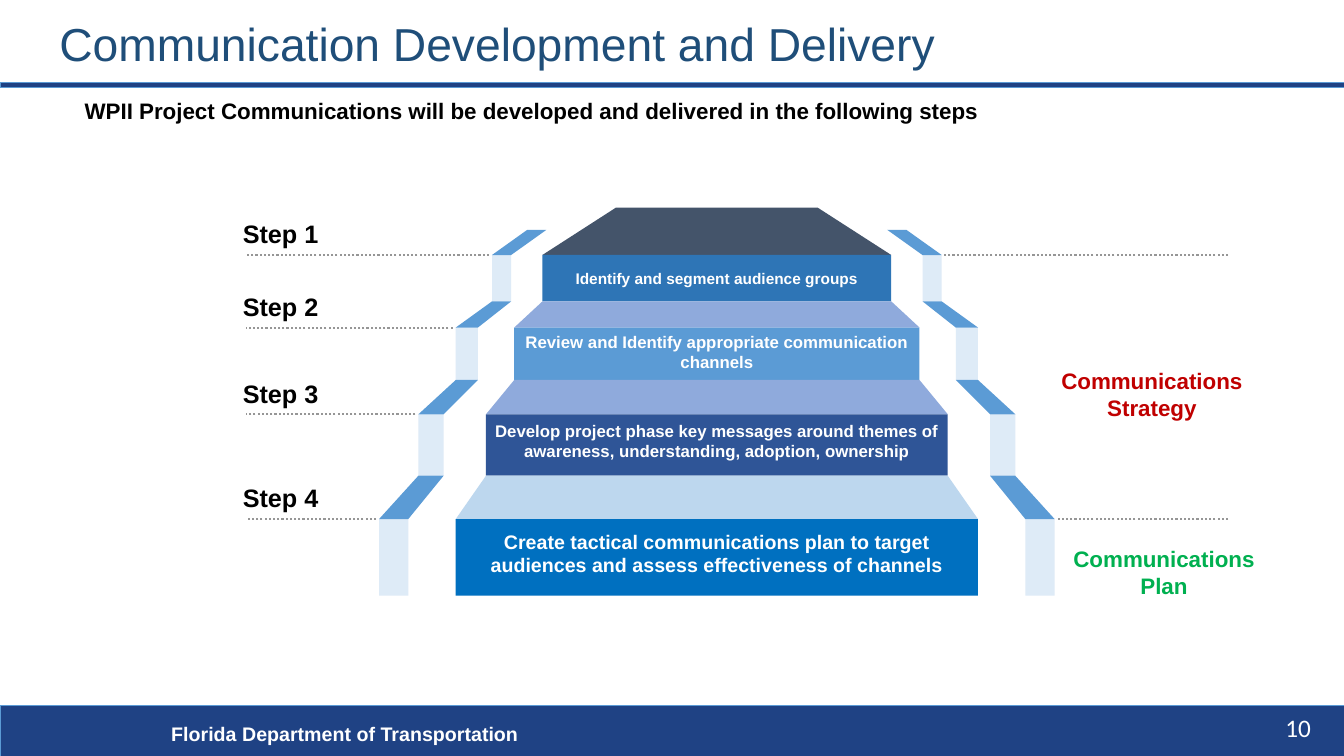
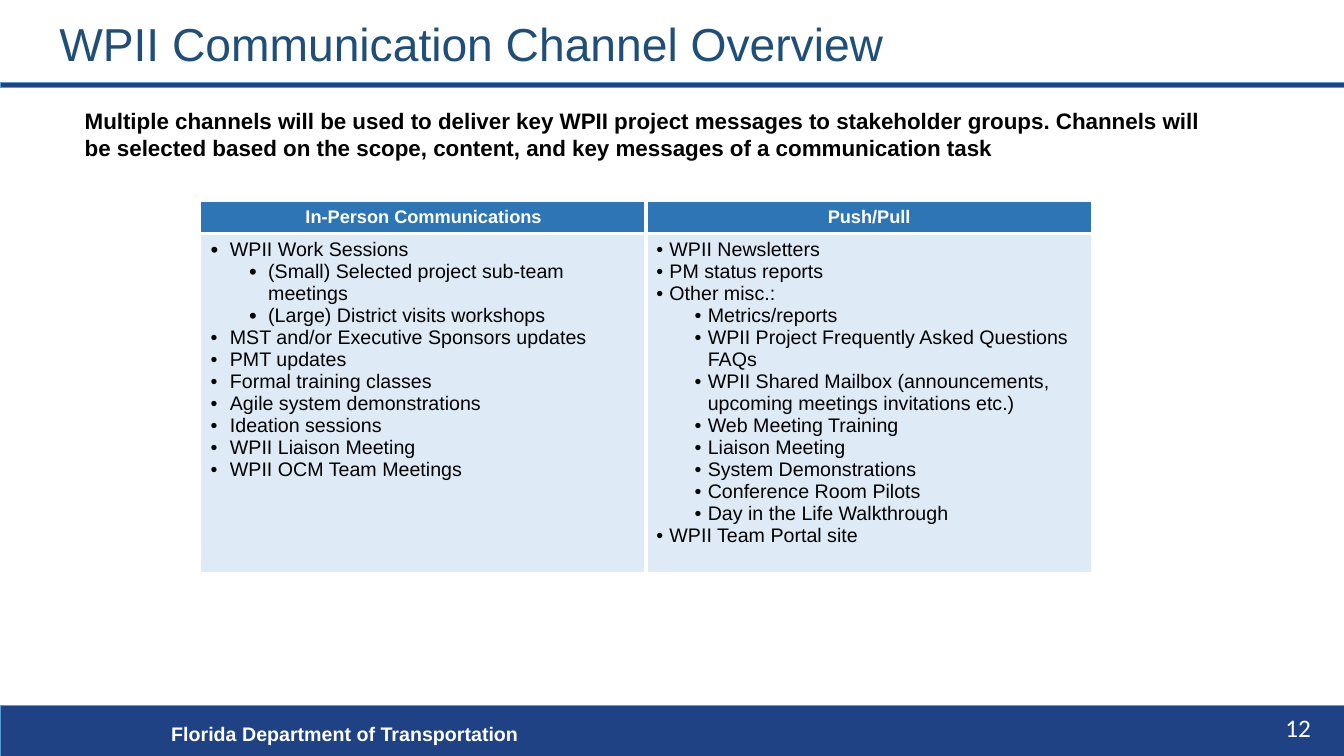
from lxml import etree
from pptx import Presentation
from pptx.dml.color import RGBColor
from pptx.enum.dml import MSO_LINE
from pptx.enum.shapes import MSO_CONNECTOR, MSO_SHAPE
from pptx.enum.text import MSO_ANCHOR, PP_ALIGN
from pptx.oxml.ns import qn
from pptx.util import Inches, Pt

RECTANGLE = MSO_SHAPE.RECTANGLE
STRAIGHT = MSO_CONNECTOR.STRAIGHT
DOTTED = MSO_LINE.ROUND_DOT
LEFT, CENTER = PP_ALIGN.LEFT, PP_ALIGN.CENTER
TOP, MIDDLE = MSO_ANCHOR.TOP, MSO_ANCHOR.MIDDLE
DEFAULT_INSETS = (0.1, 0.05, 0.1, 0.05)
FONT = "Arial"

COLORS = {
    "white": "FFFFFF", "black": "000000", "navy": "1F4284",
    "title": "1F4E79", "sky": "5B9BD5", "pale": "DEEBF7",
    "slate": "44546A", "periwinkle": "8FAADC", "ice": "BDD7EE",
    "steel": "2E75B6", "royal": "2F5597", "azure": "0070C0",
    "gray": "969696", "red": "C00000", "green": "00B050",
}

# Pyramid tiers, top to bottom; lengths are measured from the box top and
# from the vertical axis
TIERS = [
    dict(text="Identify and segment audience groups", size=11, inset=0,
         face="steel", roof="slate", top=0.47, bottom=0.93,
         half=1.73, rail=(2.04, 2.23)),
    dict(text="Review and Identify appropriate communication channels",
         size=12, inset=0.04, face="sky", roof="periwinkle",
         top=1.19, bottom=1.71, half=2.01, rail=(2.37, 2.59)),
    dict(text="Develop project phase key messages around themes of "
              "awareness, understanding, adoption, ownership",
         size=12, inset=0.08, face="royal", roof="periwinkle",
         top=2.05, bottom=2.66, half=2.29, rail=(2.71, 2.96)),
    dict(text="Create tactical communications plan to target audiences "
              "and assess effectiveness of channels",
         size=14, inset=0.08, face="azure", roof="ice",
         top=3.09, bottom=3.85, half=2.59, rail=(3.06, 3.35)),
]

# Bullets as (level, text)
IN_PERSON = [
    (0, "WPII Work Sessions"),
    (1, "(Small) Selected project sub-team meetings"),
    (1, "(Large) District visits workshops"),
    (0, "MST and/or Executive Sponsors updates"),
    (0, "PMT updates"),
    (0, "Formal training classes"),
    (0, "Agile system demonstrations"),
    (0, "Ideation sessions"),
    (0, "WPII Liaison Meeting"),
    (0, "WPII OCM Team Meetings"),
]
PUSH_PULL = [
    (0, "WPII Newsletters"),
    (0, "PM status reports"),
    (0, "Other misc.:"),
    (1, "Metrics/reports"),
    (1, "WPII Project Frequently Asked Questions FAQs"),
    (1, "WPII Shared Mailbox (announcements, upcoming meetings "
        "invitations etc.)"),
    (1, "Web Meeting Training"),
    (1, "Liaison Meeting"),
    (1, "System Demonstrations"),
    (1, "Conference Room Pilots"),
    (1, "Day in the Life Walkthrough"),
    (0, "WPII Team Portal site"),
]
CHANNELS = [
    dict(header="In-Person Communications", items=IN_PERSON,
         hang=0.19, large_bullets=3),
    dict(header="Push/Pull", items=PUSH_PULL, hang=0.13, large_bullets=0),
]


def rgb(name):
    return RGBColor.from_string(COLORS[name])


def write(para, text, size=14, color="black", bold=False, font=FONT,
          align=LEFT):
    para.alignment = align
    span = para.add_run()
    span.text = text
    span.font.size = Pt(size)
    span.font.name = font
    span.font.bold = bold
    span.font.color.rgb = rgb(color)


def fill_frame(frame, text, insets=DEFAULT_INSETS, anchor=TOP, wrap=True,
               spacing=None, **style):
    frame.word_wrap = wrap
    frame.vertical_anchor = anchor
    (frame.margin_left, frame.margin_top,
     frame.margin_right, frame.margin_bottom) = map(Inches, insets)
    for index, line in enumerate(text.split("\n")):
        para = frame.add_paragraph() if index else frame.paragraphs[0]
        if spacing:
            para.line_spacing = spacing
        write(para, line, **style)


def add_text(page, box, text, **style):
    shape = page.shapes.add_textbox(*map(Inches, box))
    fill_frame(shape.text_frame, text, **style)


def paint(shape, fill, line=None):
    shape.shadow.inherit = False
    shape.fill.solid()
    shape.fill.fore_color.rgb = rgb(fill)
    if line:
        shape.line.color.rgb = rgb(line)
        shape.line.width = Pt(0.5)
    else:
        shape.line.fill.background()


def add_block(page, box, fill, line=None):
    shape = page.shapes.add_shape(RECTANGLE, *map(Inches, box))
    paint(shape, fill, line)
    return shape


def add_polygon(page, points, fill):
    corners = [(Inches(x), Inches(y)) for x, y in points]
    builder = page.shapes.build_freeform(*corners[0], scale=1.0)
    builder.add_line_segments(corners[1:], close=True)
    paint(builder.convert_to_shape(), fill)


def add_dotted_line(page, start, end, y):
    line = page.shapes.add_connector(
        STRAIGHT, Inches(start), Inches(y), Inches(end), Inches(y))
    line.line.color.rgb = rgb("gray")
    line.line.width = Pt(1.5)
    line.line.dash_style = DOTTED
    etree.SubElement(line._element.spPr, qn("a:effectLst"))


def add_page(deck, title, number, intro, intro_top):
    """Add a page with the shared bands, title, footer and intro line."""
    page = deck.slides.add_slide(deck.slide_layouts[6])
    add_block(page, (0, 7, 13.33, 0.5), "navy", "sky")
    add_text(page, (1.6, 7.11, 7.98, 0.34),
             "Florida Department of Transportation",
             size=14, color="white", bold=True)
    add_block(page, (0, 0.82, 13.33, 0.05), "navy", "sky")
    add_text(page, (0.49, 0.1, 11.5, 0.72), title, size=33, color="title",
             anchor=MIDDLE, spacing=0.9)
    add_text(page, (0.84, intro_top, 11.16, 0.6), intro, size=16, bold=True,
             insets=(0, 0, 0, 0))
    add_text(page, (12.65, 7.02, 0.47, 0.4), str(number), size=18,
             color="white", font="Calibri", wrap=False)
    return page


def draw_rails(page, axis, top):
    """Folded ribbons on both sides of the pyramid."""
    for side in (-1, 1):
        upper, upper_y = (1.69, 1.88), 0.22
        for tier in TIERS:
            inner, outer = tier["rail"]
            edge = min(side * inner, side * outer)
            add_block(page, (axis + edge, top + tier["top"], outer - inner,
                             tier["bottom"] - tier["top"]), "pale")
            outline = [(upper[0], upper_y), (upper[1], upper_y),
                       (outer, tier["top"]), (inner, tier["top"])]
            add_polygon(page, [(axis + side * x, top + y)
                               for x, y in outline], "sky")
            upper, upper_y = tier["rail"], tier["bottom"]


def draw_pyramid(page, box):
    """Stepped pyramid with step labels and guide lines."""
    left, top, width, _ = box
    axis = left + 4.8
    draw_rails(page, axis, top)
    upper_half, upper_y = 1.0, top
    for number, tier in enumerate(TIERS, 1):
        half, face_y = tier["half"], top + tier["top"]
        # Sloping roof and front face
        add_polygon(page, [(axis - upper_half, upper_y),
                           (axis + upper_half, upper_y),
                           (axis + half, face_y),
                           (axis - half, face_y)], tier["roof"])
        face = add_block(page, (axis - half, face_y, 2 * half,
                                tier["bottom"] - tier["top"]), tier["face"])
        fill_frame(face.text_frame, tier["text"], size=tier["size"],
                   color="white", bold=True, align=CENTER, anchor=MIDDLE,
                   insets=(0, 0, 0, tier["inset"]))
        # Step label and guide lines
        add_text(page, (left, face_y - 0.41, 0.96, 0.4), f"Step {number}",
                 size=18, bold=True, wrap=False)
        reach = tier["rail"][1]
        add_dotted_line(page, axis - reach - 0.03, left + 0.13, face_y)
        if number in (1, len(TIERS)):
            add_dotted_line(page, left + width, axis + reach + 0.02, face_y)
        upper_half, upper_y = half, top + tier["bottom"]


def add_bullet(para, text, level, hang, large):
    para.level = level
    props = para._p.get_or_add_pPr()
    props.set("marL", str(Inches(hang + 0.38 * level)))
    props.set("indent", str(-Inches(hang)))
    if large:
        etree.SubElement(props, qn("a:buSzPct"), val="112000")
    etree.SubElement(props, qn("a:buFont"), typeface=FONT)
    etree.SubElement(props, qn("a:buChar"), char="•")
    write(para, text, size=14)


def style_cell(cell, fill, widths):
    """Fill a cell and give it white borders: left, right, top, bottom."""
    cell.fill.solid()
    cell.fill.fore_color.rgb = rgb(fill)
    props = cell._tc.get_or_add_tcPr()
    for index, (side, width) in enumerate(zip("LRTB", widths)):
        border = etree.Element(qn(f"a:ln{side}"), w=str(Pt(width)))
        solid = etree.SubElement(border, qn("a:solidFill"))
        etree.SubElement(solid, qn("a:srgbClr"), val=COLORS["white"])
        props.insert(index, border)


def draw_channel_table(page, box, header_height):
    left, top, width, height = box
    table = page.shapes.add_table(2, len(CHANNELS),
                                  *map(Inches, box)).table
    table.horz_banding = False
    table.rows[0].height = Inches(header_height)
    table.rows[1].height = Inches(height - header_height)
    for column, channel in enumerate(CHANNELS):
        table.columns[column].width = Inches(width / len(CHANNELS))
        sides = (1, 3) if column == 0 else (3, 1)
        header, body = table.cell(0, column), table.cell(1, column)
        style_cell(header, "steel", (*sides, 1, 3))
        style_cell(body, "pale", (*sides, 3, 2.25))
        write(header.text_frame.paragraphs[0], channel["header"], size=13,
              color="white", bold=True, align=CENTER)
        frame = body.text_frame
        for index, (level, text) in enumerate(channel["items"]):
            para = frame.add_paragraph() if index else frame.paragraphs[0]
            add_bullet(para, text, level, channel["hang"],
                       index < channel["large_bullets"])


def build_delivery_page(deck):
    page = add_page(
        deck, "Communication Development and Delivery", 10,
        "WPII Project Communications will be developed and delivered in "
        "the following steps", 0.96)
    draw_pyramid(page, (2.31, 2.06, 9.87, 3.85))
    # Outcome labels
    for left, top, text, color in (
            (9.95, 3.54, "Communications\nStrategy", "red"),
            (10.07, 5.31, "Communications\nPlan", "green")):
        add_text(page, (left, top, 2.95, 0.6), text, size=16, color=color,
                 bold=True, align=CENTER, insets=(0, 0.1, 0, 0))


def build_channel_page(deck):
    page = add_page(
        deck, "WPII Communication Channel Overview", 12,
        "Multiple channels will be used to deliver key WPII project "
        "messages to stakeholder groups. Channels will be selected based on "
        "the scope, content, and key messages of a communication task", 1.06)
    draw_channel_table(page, (1.99, 2, 8.84, 3.63), 0.31)


def main():
    deck = Presentation()
    deck.slide_width, deck.slide_height = Inches(13.33), Inches(7.5)
    build_delivery_page(deck)
    build_channel_page(deck)
    deck.save("out.pptx")


if __name__ == "__main__":
    main()
